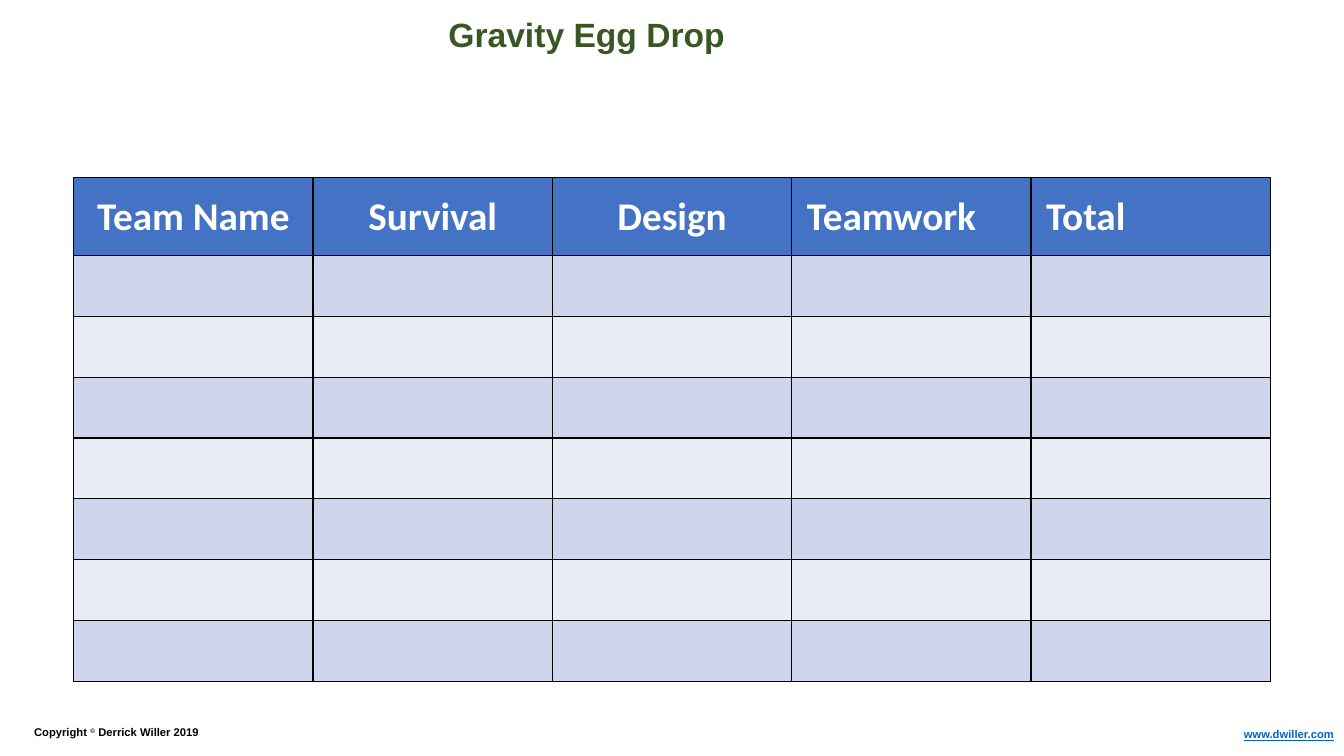
"""Builds the Gravity Egg Drop score sheet slide."""
import pptx
import pptx.dml.color
import pptx.enum.text
import pptx.oxml
import pptx.oxml.ns
import pptx.util

RGBColor = pptx.dml.color.RGBColor
ALIGN = pptx.enum.text.PP_ALIGN

GREEN = RGBColor(0x38, 0x57, 0x23)
BLACK = RGBColor(0x00, 0x00, 0x00)
WHITE = RGBColor(0xFF, 0xFF, 0xFF)
LINK_BLUE = RGBColor(0x05, 0x63, 0xC1)
HEADER_BLUE = RGBColor(0x44, 0x72, 0xC4)
BANDS = (RGBColor(0xCF, 0xD5, 0xEA), RGBColor(0xE9, 0xEB, 0xF5))

HEADINGS = (
    ("Team Name", ALIGN.CENTER),
    ("Survival", ALIGN.CENTER),
    ("Design", ALIGN.CENTER),
    ("Teamwork", ALIGN.LEFT),
    ("Total", ALIGN.LEFT),
)
TEAM_ROWS = 7


class Sheet:
    def __init__(self, prs, font, table_font):
        self.width, self.height = prs.slide_width, prs.slide_height
        self.font, self.table_font = font, table_font
        self.slide = prs.slides.add_slide(prs.slide_layouts[6])

    def x(self, percent):
        return round(self.width * percent / 100)

    def y(self, percent):
        return round(self.height * percent / 100)

    def style(self, r, font, size, color):
        r.font.name = font
        r.font.size = pptx.util.Pt(size)
        r.font.bold = True
        r.font.color.rgb = color

    def text(self, left, top, width, height, parts, size, color,
             align=ALIGN.LEFT, wrap=True, underline=False):
        sp = self.slide.shapes.add_textbox(
            self.x(left), self.y(top), self.x(width), self.y(height))
        tf = sp.text_frame
        tf.word_wrap = wrap
        tf.auto_size = pptx.enum.text.MSO_AUTO_SIZE.SHAPE_TO_FIT_TEXT
        p = tf.paragraphs[0]
        p.alignment = align
        for part in parts:
            r = p.add_run()
            r.text = part
            self.style(r, self.font, size, color)
            if underline:
                r.font.underline = True
        return p

    def borders(self, cell):
        tcPr = cell._tc.get_or_add_tcPr()
        for i, side in enumerate(("lnL", "lnR", "lnT", "lnB")):
            tcPr.insert(i, pptx.oxml.parse_xml(
                f'<a:{side} {pptx.oxml.ns.nsdecls("a")} w="12700">'
                f'<a:solidFill><a:srgbClr val="{BLACK}"/></a:solidFill>'
                f'</a:{side}>'))

    def heading(self, cell, label, align):
        inset = pptx.util.Inches(0.15)
        cell.margin_left = cell.margin_right = inset
        cell.margin_top = cell.margin_bottom = inset
        cell.vertical_anchor = pptx.enum.text.MSO_ANCHOR.MIDDLE
        p = cell.text_frame.paragraphs[0]
        p.text = label
        p.alignment = align
        self.style(p.runs[0], self.table_font, 28, WHITE)

    def score_table(self, left, top, width, header_height, row_height):
        height = header_height + TEAM_ROWS * row_height
        table = self.slide.shapes.add_table(
            TEAM_ROWS + 1, len(HEADINGS), self.x(left), self.y(top),
            self.x(width), self.y(height)).table
        for i, row in enumerate(table.rows):
            row.height = self.y(row_height if i else header_height)
            for cell in row.cells:
                cell.fill.solid()
                cell.fill.fore_color.rgb = BANDS[(i - 1) % 2] if i else HEADER_BLUE
                self.borders(cell)
        for cell, (label, align) in zip(table.rows[0].cells, HEADINGS):
            self.heading(cell, label, align)


def main():
    prs = pptx.Presentation()
    prs.slide_width = pptx.util.Inches(13.33)
    prs.slide_height = pptx.util.Inches(7.5)
    s = Sheet(prs, "Arial", "Calibri")
    s.text(32.63, 1.2, 22.28, 6.67, ["Gravity Egg Drop"], 24, GREEN, wrap=False)
    p = s.text(1.8, 95.33, 42.4, 3.2,
               ["Copyright ", "©", " Derrick Willer 2019"], 8, BLACK)
    p.runs[1]._r.get_or_add_rPr().set("baseline", "30000")
    s.text(89.95, 95.6, 10.05, 3.2, ["www.dwiller.com"], 8, LINK_BLUE,
           align=ALIGN.RIGHT, underline=True)
    s.score_table(5.48, 23.5, 89.05, 10.3, 8.05)
    prs.save("out.pptx")


if __name__ == "__main__":
    main()
